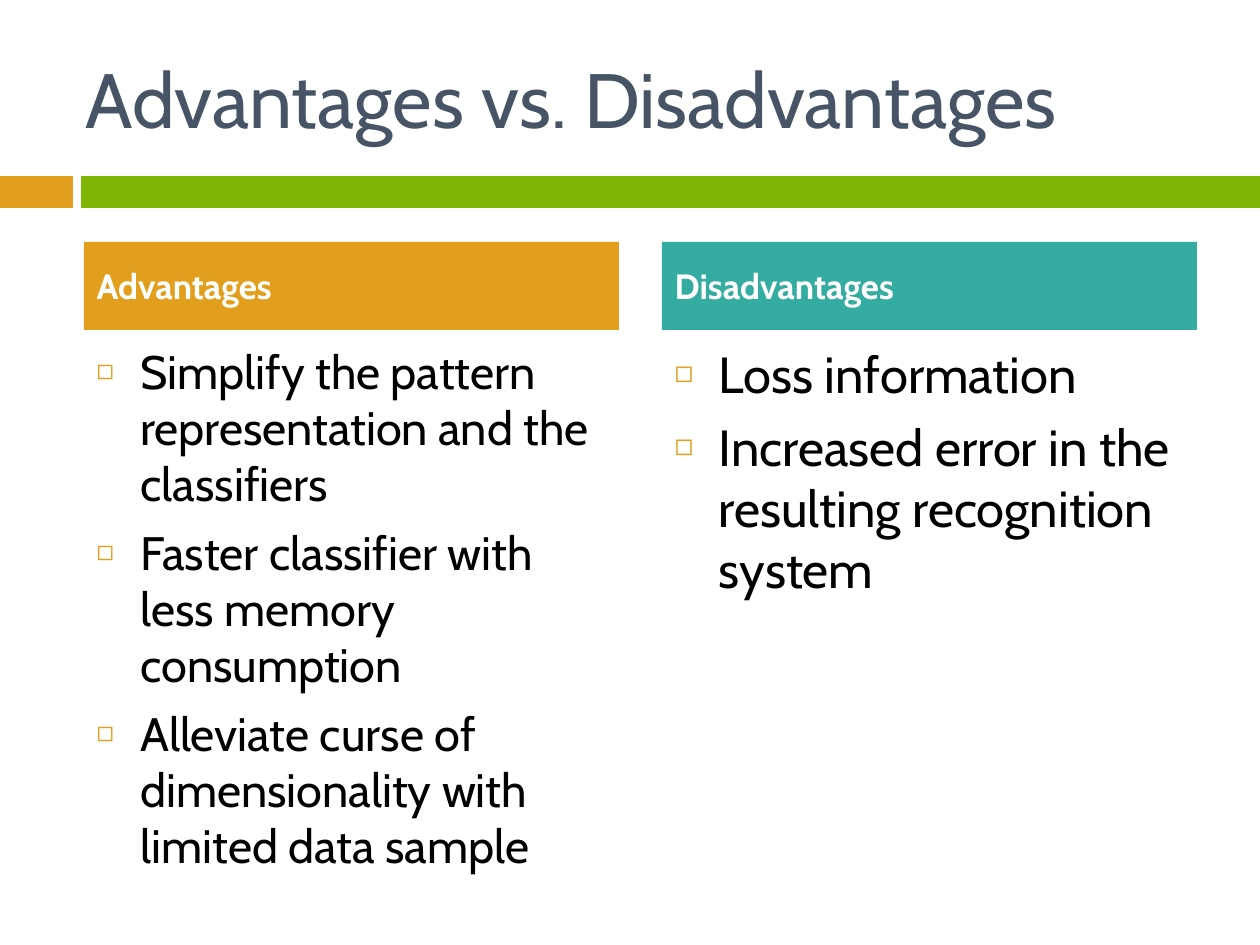
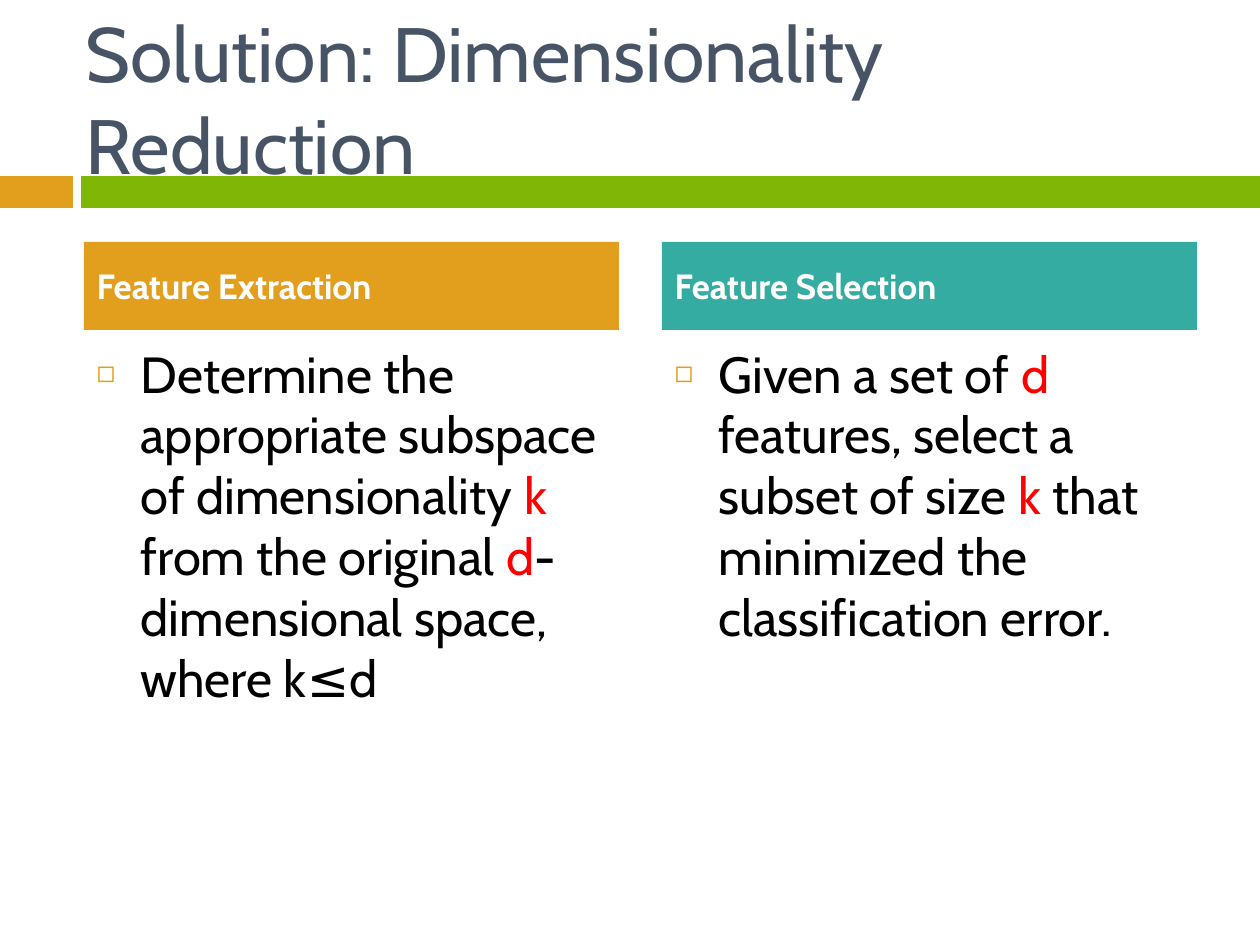
from dataclasses import dataclass

from lxml.etree import SubElement
from pptx import Presentation
from pptx.dml.color import RGBColor
from pptx.enum.shapes import MSO_SHAPE
from pptx.enum.text import MSO_ANCHOR, MSO_AUTO_SIZE, PP_ALIGN
from pptx.oxml.ns import qn
from pptx.util import Pt


@dataclass(frozen=True)
class Theme:
    font: str = "Cabin"
    slate: str = "465466"
    gold: str = "E29F1D"
    green: str = "80B606"
    teal: str = "35ACA2"
    white: str = "FFFFFF"
    black: str = "000000"
    red: str = "FF0000"
    title: float = 44
    head: float = 20
    body: float = 29
    small: float = 26.8
    gap: float = 7


THEME = Theme()
WIDE, HIGH = 1260, 945
COMPARE = 4  # layout with a title and two headed lists
INDENT = 44


def px(n):
    return round(n * 914400 / 126)


def place(shape, box):
    shape.left, shape.top, shape.width, shape.height = map(px, box)


def paint(shape, color):
    shape.fill.solid()
    shape.fill.fore_color.rgb = RGBColor.from_string(color)


def style(part, size, color, bold=False):
    font = part.font
    font.name, font.size, font.bold = THEME.font, Pt(size), bold
    font.color.rgb = RGBColor.from_string(color)


def setup(shape, box, anchor):
    """Place a placeholder and return its text frame."""
    place(shape, box)
    frame = shape.text_frame
    frame.word_wrap = True
    frame.auto_size = MSO_AUTO_SIZE.NONE
    frame.vertical_anchor = anchor
    return frame


def bullet(para):
    props = para._p.get_or_add_pPr()
    props.set("marL", str(px(INDENT)))
    props.set("indent", str(-px(INDENT)))
    tint = SubElement(props, qn("a:buClr"))
    SubElement(tint, qn("a:srgbClr"), val=THEME.gold)
    SubElement(props, qn("a:buSzPct"), val="60000")
    SubElement(props, qn("a:buChar"), char="◻")


def bands(slide, box):
    """Short gold and long green bar, behind the text."""
    left, top, width, height = box
    short, start = 73, 81
    parts = ((left, short, THEME.gold), (left + start, width - start, THEME.green))
    for spot, (x, w, color) in enumerate(parts, 2):
        bar = slide.shapes.add_shape(MSO_SHAPE.RECTANGLE, 0, 0, 0, 0)
        place(bar, (x, top, w, height))
        paint(bar, color)
        bar.line.fill.background()
        bar.shadow.inherit = False
        slide.shapes._spTree.insert(spot, bar._element)


def heading(slide, box, text):
    frame = setup(slide.shapes.title, box, MSO_ANCHOR.MIDDLE)
    frame.text = text
    para = frame.paragraphs[0]
    para.alignment = PP_ALIGN.LEFT
    style(para, THEME.title, THEME.slate)


def column(head, body, box, color, label, items, size):
    """Coloured label over a bulleted list; text between bars is red."""
    left, top, width, height = box
    strip, drop = 88, 94

    # Label
    paint(head, color)
    frame = setup(head, (left, top, width, strip), MSO_ANCHOR.MIDDLE)
    frame.text = label
    para = frame.paragraphs[0]
    para.space_before = Pt(THEME.gap)
    style(para, THEME.head, THEME.white, True)

    # List
    frame = setup(body, (left, top + drop, width, height - drop), MSO_ANCHOR.TOP)
    for i, item in enumerate(items):
        para = frame.add_paragraph() if i else frame.paragraphs[0]
        para.space_before = Pt(THEME.gap)
        style(para, size, THEME.black)
        bullet(para)
        for j, piece in enumerate(item.split("|")):
            run = para.add_run()
            run.text = piece
            if j % 2:
                run.font.color.rgb = RGBColor.from_string(THEME.red)


def compare(deck, title, sides):
    slide = deck.slides.add_slide(deck.slide_layouts[COMPARE])
    bands(slide, (0, 176, WIDE, 32))
    heading(slide, (73, 38, 1124, 120), title)
    left, step = 84, 578
    holds = slide.placeholders
    for i, (color, (label, items, size)) in enumerate(
            zip((THEME.gold, THEME.teal), sides)):
        box = (left + i * step, 242, 535, 588)
        column(holds[2 * i + 1], holds[2 * i + 2], box, color, label, items, size)


def main():
    deck = Presentation()
    deck.slide_width, deck.slide_height = px(WIDE), px(HIGH)

    compare(deck, "Advantages vs. Disadvantages", (
        ("Advantages", (
            "Simplify the pattern representation and the classifiers",
            "Faster classifier with less memory consumption",
            "Alleviate curse of dimensionality with limited data sample",
        ), THEME.small),
        ("Disadvantages", (
            "Loss information",
            "Increased error in the resulting recognition system",
        ), THEME.body),
    ))
    compare(deck, "Solution: Dimensionality Reduction", (
        ("Feature Extraction", (
            "Determine the appropriate subspace of dimensionality |k| from "
            "the original |d|-dimensional space, where k≤d",
        ), THEME.body),
        ("Feature Selection", (
            "Given a set of |d| features, select a subset of size |k| that "
            "minimized the classification error.",
        ), THEME.body),
    ))
    deck.save("out.pptx")


if __name__ == "__main__":
    main()
